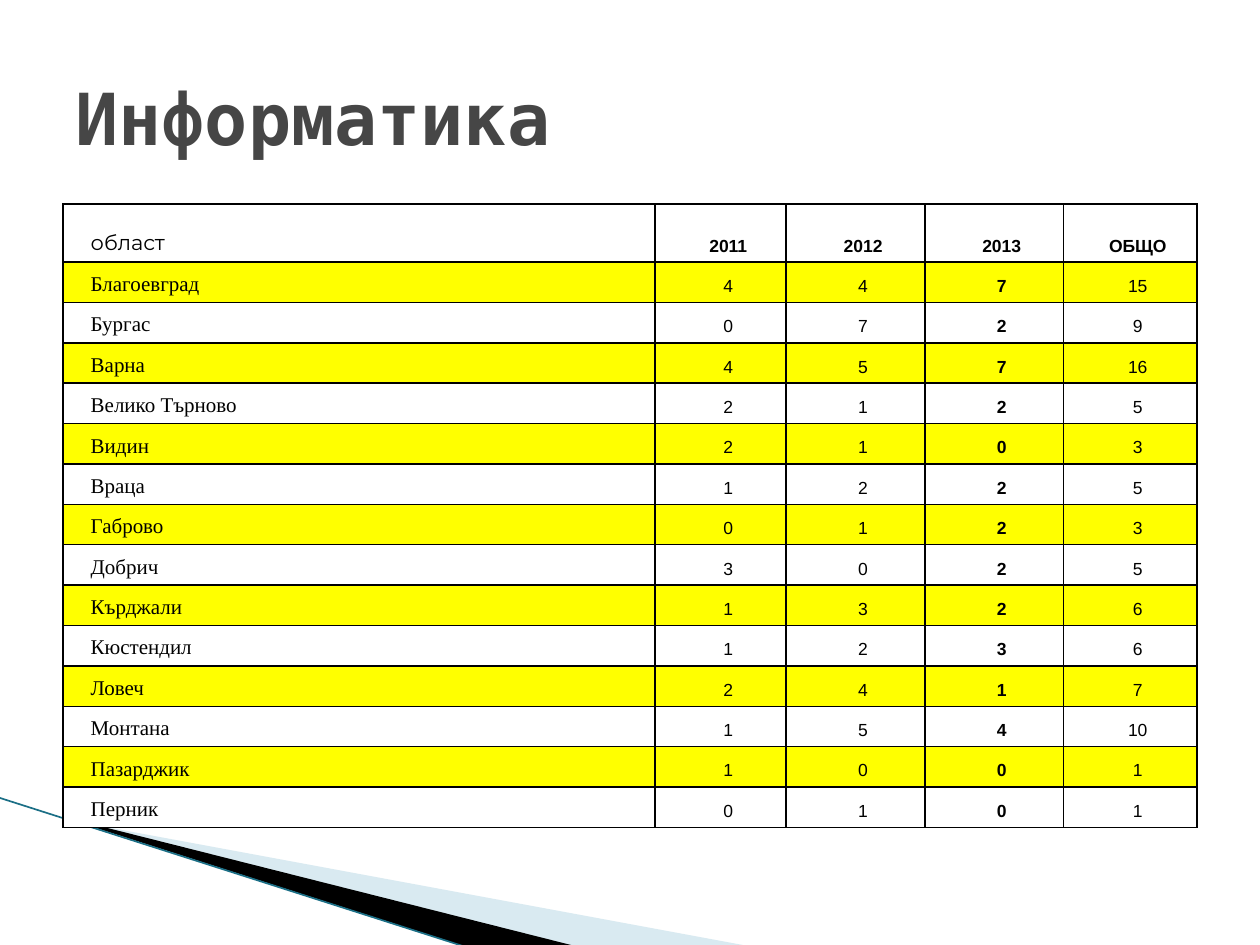
from dataclasses import dataclass
from typing import Optional

from lxml.etree import SubElement
from pptx import Presentation
from pptx.dml.color import RGBColor
from pptx.enum.shapes import MSO_CONNECTOR
from pptx.enum.text import MSO_ANCHOR, PP_ALIGN
from pptx.oxml import parse_xml
from pptx.oxml.ns import nsdecls, qn
from pptx.util import Inches, Pt

WIDTH, HEIGHT = 10, 7.5
MARGIN = 0.05 * WIDTH
COLORS = {"title": "464646", "ink": "000000", "band": "FFFF00", "plain": "FFFFFF",
          "pale_wedge": "A0CBDC", "edge": "1B6F86"}

# Table grid, in inches
TABLE_TOP, TABLE_HEIGHT, HEADER_HEIGHT = 1.62, 4.95, 0.46
COLUMN_WIDTHS = [4.7, 1.04, 1.1, 1.1, 1.06]
LATEST_YEAR_COLUMN = 3


@dataclass(frozen=True)
class Region:
    name: str
    counts: tuple[int, int, int]

    def row(self) -> list[str]:
        return [self.name, *map(str, self.counts), str(sum(self.counts))]


@dataclass(frozen=True)
class Wedge:
    points: list[tuple[float, float]]
    color: str
    opacity: Optional[int] = None


HEADINGS = ["област", "2011", "2012", "2013", "ОБЩО"]
REGIONS = [
    Region("Благоевград", (4, 4, 7)),
    Region("Бургас", (0, 7, 2)),
    Region("Варна", (4, 5, 7)),
    Region("Велико Търново", (2, 1, 2)),
    Region("Видин", (2, 1, 0)),
    Region("Враца", (1, 2, 2)),
    Region("Габрово", (0, 1, 2)),
    Region("Добрич", (3, 0, 2)),
    Region("Кърджали", (1, 3, 2)),
    Region("Кюстендил", (1, 2, 3)),
    Region("Ловеч", (2, 4, 1)),
    Region("Монтана", (1, 5, 4)),
    Region("Пазарджик", (1, 0, 0)),
    Region("Перник", (0, 1, 0)),
]
WEDGES = [
    Wedge([(0.55, 6.51), (5.95, 7.51), (4.56, 7.51), (0.55, 6.5)], "pale_wedge", 40),
    Wedge([(0.53, 6.49), (4.57, 7.51), (3.72, 7.52), (0.54, 6.5)], "ink"),
]


def rgb(key: str) -> RGBColor:
    return RGBColor.from_string(COLORS[key])


def format_font(font, color: str, **formats) -> None:
    for attribute, value in formats.items():
        setattr(font, attribute, value)
    font.color.rgb = rgb(color)


def draw_wedge(slide, wedge: Wedge) -> None:
    start, *rest = [(Inches(x), Inches(y)) for x, y in wedge.points]
    builder = slide.shapes.build_freeform(*start, scale=1)
    builder.add_line_segments(rest, close=True)
    shape = builder.convert_to_shape()
    shape.shadow.inherit = False
    shape.fill.solid()
    shape.fill.fore_color.rgb = rgb(wedge.color)
    shape.line.fill.background()
    if wedge.opacity is not None:
        color = shape.fill._xPr.find(qn("a:solidFill"))[0]
        SubElement(color, qn("a:alpha")).set("val", str(wedge.opacity * 1000))


def draw_edge(slide) -> None:
    ends = [Inches(value) for value in (-0.01, 6.33, 3.71, 7.52)]
    edge = slide.shapes.add_connector(MSO_CONNECTOR.STRAIGHT, *ends)
    edge.line.color.rgb = rgb("edge")
    edge.line.width = Pt(0.95)
    SubElement(edge._element.spPr, qn("a:effectLst"))


def draw_title(slide, title: str) -> None:
    box = slide.shapes.add_textbox(Inches(MARGIN), Inches(0.04 * HEIGHT),
                                   Inches(WIDTH - 2 * MARGIN), Inches(1.25))
    frame = box.text_frame
    frame.word_wrap = True
    frame.vertical_anchor = MSO_ANCHOR.MIDDLE
    frame.text = title
    format_font(frame.paragraphs[0].runs[0].font, "title",
                name="DejaVu Sans Mono", size=Pt(41), bold=True)


def add_borders(cell) -> None:
    properties = cell._tc.get_or_add_tcPr()
    for position, side in enumerate("LRTB"):
        properties.insert(position, parse_xml(
            f'<a:ln{side} {nsdecls("a")} w="{Pt(1)}"><a:solidFill>'
            f'<a:srgbClr val="{COLORS["ink"]}"/></a:solidFill></a:ln{side}>'))


def fill_cell(cell, text: str, row: int, column: int) -> None:
    cell.text = text
    cell.vertical_anchor = MSO_ANCHOR.BOTTOM
    is_header, is_label = row == 0, column == 0
    if is_header:
        cell.fill.background()
    else:
        cell.fill.solid()
        cell.fill.fore_color.rgb = rgb("band" if row % 2 else "plain")
    add_borders(cell)

    paragraph = cell.text_frame.paragraphs[0]
    paragraph.alignment = PP_ALIGN.LEFT if is_label else PP_ALIGN.CENTER
    indents = paragraph._p.get_or_add_pPr()
    indents.set("marL", str(Inches(0.4)))
    indents.set("indent", str(Inches(-0.28)))
    label_font = "Montserrat" if is_header else "Times New Roman"
    format_font(paragraph.runs[0].font, "ink",
                name=label_font if is_label else "Arial",
                size=Pt(12 if is_label else 10),
                bold=not is_label and (is_header or column == LATEST_YEAR_COLUMN))


def draw_results(slide) -> None:
    rows = [HEADINGS] + [region.row() for region in REGIONS]
    table = slide.shapes.add_table(
        len(rows), len(HEADINGS), Inches(MARGIN), Inches(TABLE_TOP),
        Inches(sum(COLUMN_WIDTHS)), Inches(TABLE_HEIGHT)).table
    for column, width in zip(table.columns, COLUMN_WIDTHS):
        column.width = Inches(width)
    region_height = (TABLE_HEIGHT - HEADER_HEIGHT) / len(REGIONS)
    for row, texts in enumerate(rows):
        table.rows[row].height = Inches(region_height if row else HEADER_HEIGHT)
        for column, text in enumerate(texts):
            fill_cell(table.cell(row, column), text, row, column)


def main() -> None:
    presentation = Presentation()
    presentation.slide_width = Inches(WIDTH)
    presentation.slide_height = Inches(HEIGHT)
    slide = presentation.slides.add_slide(presentation.slide_layouts[6])

    # Corner decoration
    for wedge in WEDGES:
        draw_wedge(slide, wedge)
    draw_edge(slide)

    # Title and results by region
    draw_title(slide, "Информатика")
    draw_results(slide)
    presentation.save("out.pptx")


if __name__ == "__main__":
    main()
